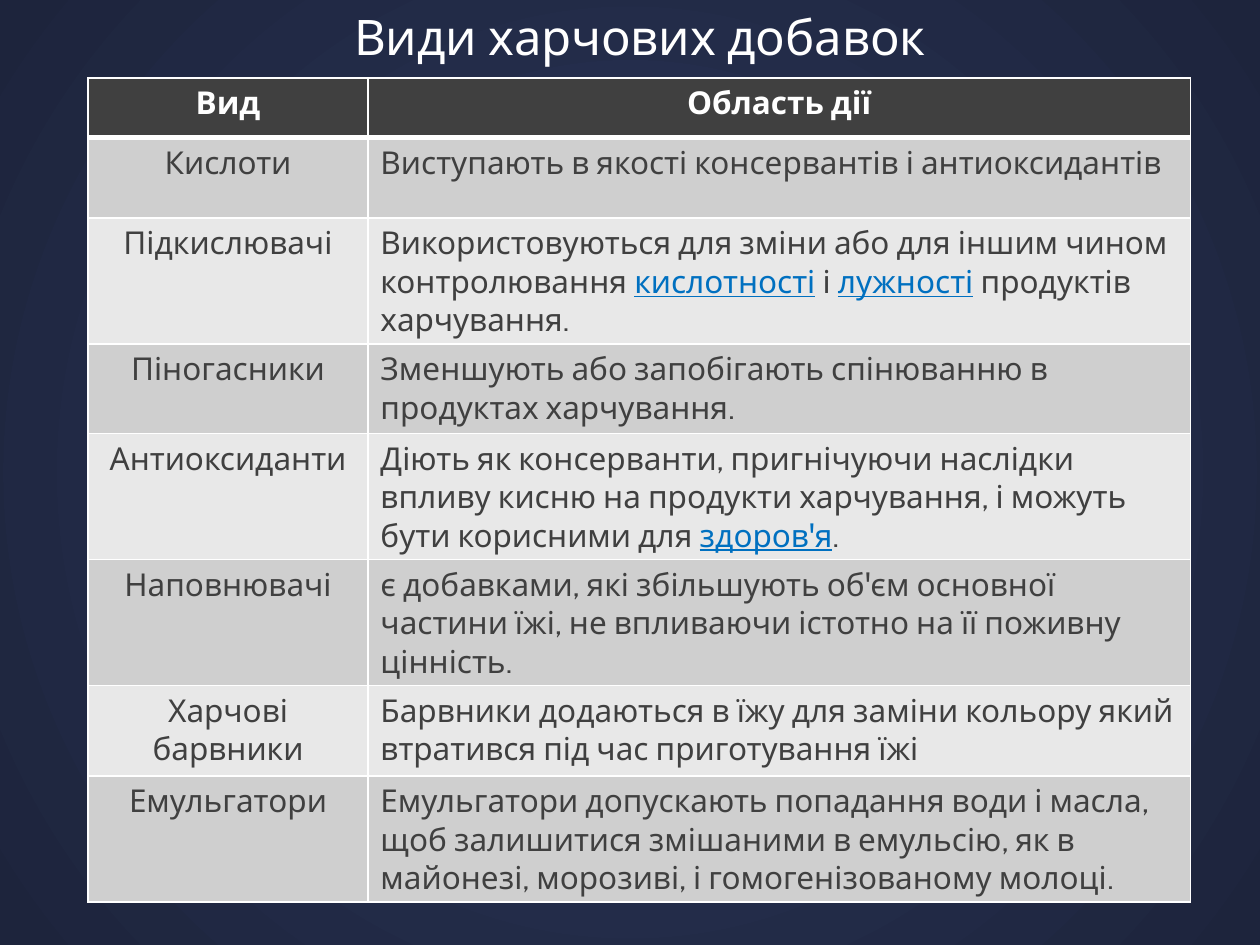
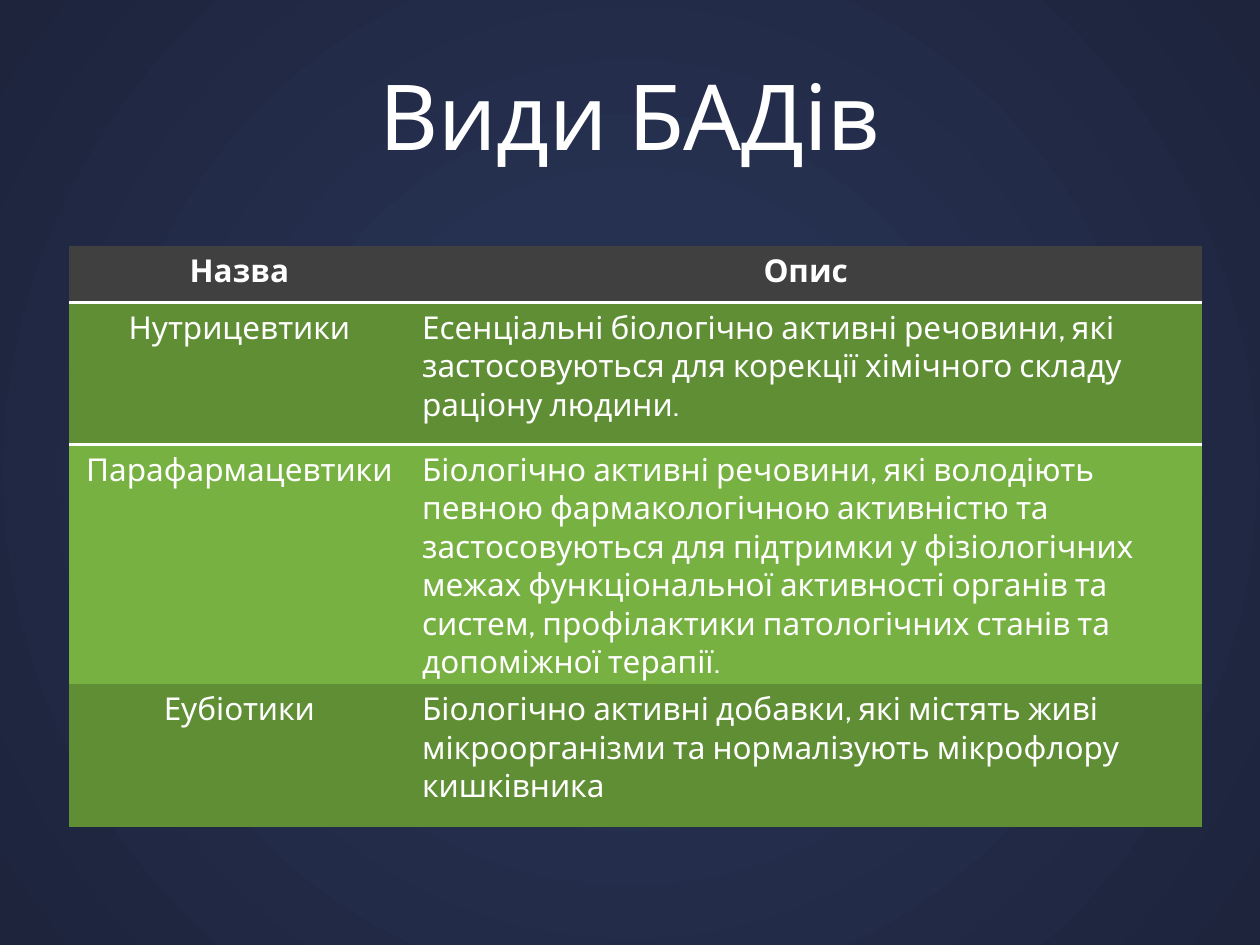
from dataclasses import dataclass

from lxml import etree
from pptx import Presentation
from pptx.dml.color import RGBColor
from pptx.enum import text
from pptx.oxml.ns import qn
from pptx.util import Inches, Pt


@dataclass(frozen=True)
class Theme:
    font: str = "Cabin"
    white: str = "FFFFFF"
    dark: str = "404040"
    link: str = "0070C0"
    glow: str = "263050"
    edge: str = "1D243C"
    grey_bands: tuple = ("CFCFCF", "E8E8E8")
    green_bands: tuple = ("5F8E35", "77B142")
    small_title: int = 28
    large_title: int = 52
    body: int = 18
    no_style: str = "{2D5ABB26-0587-4C30-8999-92F81FD0307C}"


ADDITIVES = [
    ("Вид", "Область дії"),
    ("Кислоти", "Виступають в якості консервантів і антиоксидантів"),
    ("Підкислювачі", "Використовуються для зміни або для іншим чином контролювання "
     "*кислотності* і *лужності* продуктів харчування."),
    ("Піногасники", "Зменшують або запобігають спінюванню в продуктах харчування."),
    ("Антиоксиданти", "Діють як консерванти, пригнічуючи наслідки впливу кисню на "
     "продукти харчування, і можуть бути корисними для *здоров'я*."),
    ("Наповнювачі", "є добавками, які збільшують об'єм основної частини їжі, "
     "не впливаючи істотно на її поживну цінність."),
    ("Харчові барвники", "Барвники додаються в їжу для заміни кольору який "
     "втратився під час приготування їжі"),
    ("Емульгатори", "Емульгатори допускають попадання води і масла, щоб залишитися "
     "змішаними в емульсію, як в майонезі, морозиві, і гомогенізованому молоці."),
]

SUPPLEMENTS = [
    ("Назва", "Опис"),
    ("Нутрицевтики", "Есенціальні біологічно активні речовини, які застосовуються "
     "для корекції хімічного складу раціону людини."),
    ("Парафармацевтики", "Біологічно активні речовини, які володіють певною "
     "фармакологічною активністю та застосовуються для підтримки у фізіологічних "
     "межах функціональної активності органів та систем, профілактики патологічних "
     "станів та допоміжної терапії."),
    ("Еубіотики", "Біологічно активні добавки, які містять живі мікроорганізми "
     "та нормалізують мікрофлору кишківника"),
]


class Deck:
    def __init__(self, theme):
        self.theme = theme
        self.presentation = Presentation()
        self.presentation.slide_width = Inches(10)
        self.presentation.slide_height = Inches(7.5)
        self.slide = None

    def add_slide(self):
        self.slide = self.presentation.slides.add_slide(self.presentation.slide_layouts[6])
        self.paint_background()

    def paint_background(self):
        """Radial gradient, lighter in the centre."""
        fill = self.slide.background.fill
        fill.gradient()
        stops = ((0.32, self.theme.glow), (1, self.theme.edge))
        for stop, (position, color) in zip(fill.gradient_stops, stops):
            stop.position = position
            stop.color.rgb = RGBColor.from_string(color)
        linear = next(self.slide.element.iter(qn("a:lin")))
        radial = etree.Element(qn("a:path"), path="circle")
        etree.SubElement(radial, qn("a:fillToRect"), l="50000", t="50000", r="50000", b="50000")
        linear.getparent().replace(linear, radial)

    def add_run(self, paragraph, words, color, size, **formats):
        run = paragraph.add_run()
        run.text = words
        run.font.color.rgb = RGBColor.from_string(color)
        for name, value in dict(name=self.theme.font, size=Pt(size), **formats).items():
            setattr(run.font, name, value)

    def add_title(self, words, left, top, height, size):
        box = self.slide.shapes.add_textbox(Inches(left), Inches(top), Inches(7.5), Inches(height))
        frame = box.text_frame
        frame.word_wrap = True
        frame.vertical_anchor = text.MSO_ANCHOR.BOTTOM
        paragraph = frame.paragraphs[0]
        paragraph.alignment = text.PP_ALIGN.CENTER
        paragraph.line_spacing = 0.9
        self.add_run(paragraph, words, self.theme.white, size)

    def add_table(self, rows, left, top, widths, heights, bands, color, rule, grid=0):
        """Banded table; rule is the line under the header, grid the other lines, in points."""
        frame = self.slide.shapes.add_table(
            len(rows), len(widths), Inches(left), Inches(top),
            Inches(sum(widths)), Inches(sum(heights)))
        next(frame.element.iter(qn("a:tableStyleId"))).text = self.theme.no_style
        table = frame.table
        table.first_row = table.horz_banding = False
        for column, width in zip(table.columns, widths):
            column.width = Inches(width)
        for index, (row, height) in enumerate(zip(table.rows, heights)):
            row.height = Inches(height)
            header = index == 0
            borders = dict(L=grid, R=grid, T=rule if index == 1 else grid,
                           B=rule if header else grid)
            for number, (cell, words) in enumerate(zip(row.cells, rows[index])):
                self.draw_borders(cell, borders)
                cell.fill.solid()
                cell.fill.fore_color.rgb = RGBColor.from_string(
                    self.theme.dark if header else bands[(index - 1) % 2])
                centred = header or number == 0
                self.write_cell(cell, words, self.theme.white if header else color,
                                header, centred)

    def draw_borders(self, cell, borders):
        properties = cell._tc.get_or_add_tcPr()
        for side, points in borders.items():
            if points:
                line = etree.SubElement(properties, qn(f"a:ln{side}"), w=str(Pt(points)))
                fill = etree.SubElement(line, qn("a:solidFill"))
                etree.SubElement(fill, qn("a:srgbClr"), val=self.theme.white)

    def write_cell(self, cell, words, color, bold, centred):
        """Words between asterisks look like links."""
        paragraph = cell.text_frame.paragraphs[0]
        paragraph.alignment = text.PP_ALIGN.CENTER if centred else text.PP_ALIGN.LEFT
        for index, part in enumerate(words.split("*")):
            linked = index % 2 == 1
            self.add_run(paragraph, part, self.theme.link if linked else color,
                         self.theme.body, bold=bold, underline=linked)


def main():
    theme = Theme()
    deck = Deck(theme)

    deck.add_slide()
    deck.add_title("Види харчових добавок", 1.33, 0, 0.57, theme.small_title)
    deck.add_table(ADDITIVES, 0.7, 0.62, (2.22, 6.53),
                   (0.47, 0.64, 0.91, 0.71, 0.64, 0.64, 0.72, 0.64),
                   theme.grey_bands, theme.dark, rule=3, grid=1)

    deck.add_slide()
    deck.add_title("Види БАДів", 1.25, 0.31, 1.09, theme.large_title)
    deck.add_table(SUPPLEMENTS, 0.55, 1.95, (2.7, 6.29), (0.45, 1.13, 1.81, 1.13),
                   theme.green_bands, theme.white, rule=2)

    deck.presentation.save("out.pptx")


if __name__ == "__main__":
    main()
